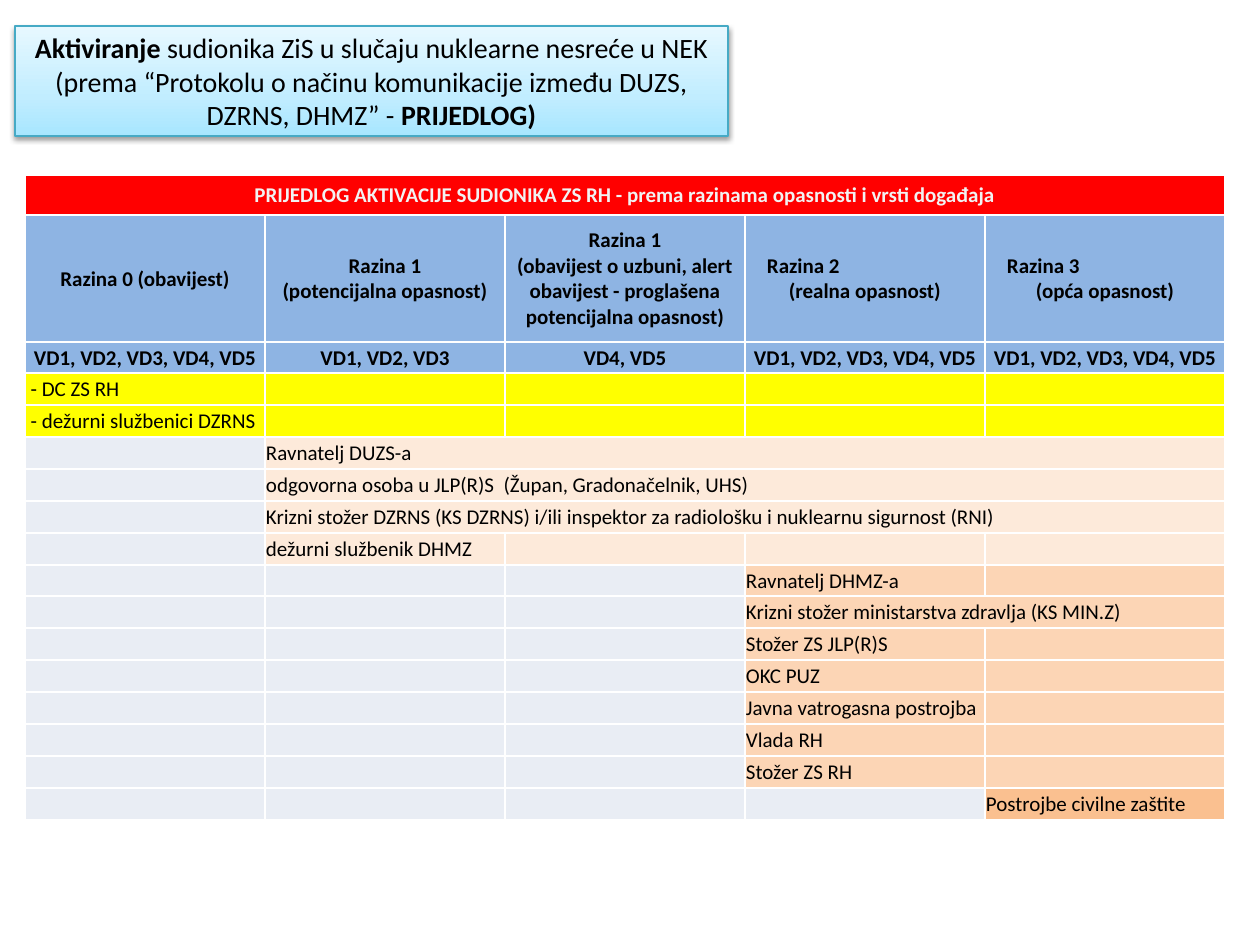
import dataclasses
import itertools

import lxml.etree
import pptx
import pptx.dml.color
import pptx.enum.text
import pptx.oxml
import pptx.oxml.ns
import pptx.slide
import pptx.table
import pptx.util

EMU_PER_PX = 914400 / 126
FONT = "Calibri"
COLUMNS = 5
COLUMN_WIDTH = 240
BANNER_HEIGHT = 40
LEVEL_HEIGHT = 127
BODY_HEIGHT = 478
BLUE = "8EB4E3"
YELLOW = "FFFF00"
PALE = "E9EDF4"
CREAM = "FDEADA"
PEACH = "FCD5B5"
ORANGE = "FAC090"
CENTER = pptx.enum.text.PP_ALIGN.CENTER
LEFT = pptx.enum.text.PP_ALIGN.LEFT


@dataclasses.dataclass(frozen=True)
class Level:
    text: str
    events: str
    first_line_indent: int = 0


@dataclasses.dataclass(frozen=True)
class Participant:
    text: str
    start: int
    fill: str
    span: int = 1


ALL_EVENTS = "VD1, VD2, VD3, VD4, VD5"
BANNER = "PRIJEDLOG AKTIVACIJE SUDIONIKA ZS RH - prema razinama opasnosti i vrsti događaja"
LEVELS = [
    Level("Razina 0 (obavijest)", ALL_EVENTS),
    Level("Razina 1\n(potencijalna opasnost)", "VD1, VD2, VD3"),
    Level(
        "Razina 1\n(obavijest o uzbuni, alert obavijest - proglašena potencijalna opasnost)",
        "VD4, VD5",
    ),
    Level("Razina 2\n(realna opasnost)", ALL_EVENTS, 21),
    Level("Razina 3\n(opća opasnost)", ALL_EVENTS, 21),
]
PARTICIPANTS = [
    Participant(" - DC ZS RH", 0, YELLOW),
    Participant(" - dežurni službenici DZRNS", 0, YELLOW),
    Participant("Ravnatelj DUZS-a", 1, CREAM, 4),
    Participant("odgovorna osoba u JLP(R)S  (Župan, Gradonačelnik, UHS)", 1, CREAM, 4),
    Participant(
        "Krizni stožer DZRNS (KS DZRNS) i/ili inspektor za radiološku i nuklearnu sigurnost (RNI)",
        1, CREAM, 4,
    ),
    Participant("dežurni službenik DHMZ", 1, CREAM),
    Participant("Ravnatelj DHMZ-a", 3, PEACH),
    Participant("Krizni stožer ministarstva zdravlja (KS MIN.Z)", 3, PEACH, 2),
    Participant("Stožer ZS JLP(R)S", 3, PEACH),
    Participant("OKC PUZ", 3, PEACH),
    Participant("Javna vatrogasna postrojba", 3, PEACH),
    Participant("Vlada RH", 3, PEACH),
    Participant("Stožer ZS RH", 3, PEACH),
    Participant("Postrojbe civilne zaštite", 4, ORANGE),
]
TITLE_RUNS = [
    ("Aktiviranje", True),
    (
        " sudionika ZiS u slučaju nuklearne nesreće u NEK (prema “Protokolu o načinu "
        "komunikacije između DUZS, DZRNS, DHMZ” - ",
        False,
    ),
    ("PRIJEDLOG)", True),
]


def px(length: int) -> pptx.util.Emu:
    return pptx.util.Emu(round(length * EMU_PER_PX))


def color(value: str) -> pptx.dml.color.RGBColor:
    return pptx.dml.color.RGBColor.from_string(value)


def drawing(tag: str, content: str, attributes: str = "") -> lxml.etree.ElementBase:
    namespace = pptx.oxml.ns.nsdecls("a")
    return pptx.oxml.parse_xml(f"<a:{tag} {namespace} {attributes}>{content}</a:{tag}>")


def format_font(font, size: int, bold: bool, value: str) -> None:
    font.name = FONT
    font.size = pptx.util.Pt(size)
    font.bold = bold
    font.color.rgb = color(value)


def add_title(slide: pptx.slide.Slide) -> None:
    title = slide.shapes.title
    title.left, title.top, title.width, title.height = px(15), px(26), px(713), px(110)
    stops = "".join(
        f'<a:gs pos="{position * 1000}"><a:srgbClr val="{value}"/></a:gs>'
        for position, value in [(0, "A7E6FF"), (35, "C1EDFF"), (100, "E7F8FF")]
    )
    properties = title._element.spPr
    properties.append(
        drawing("gradFill", f'<a:gsLst>{stops}</a:gsLst><a:lin ang="16200000" scaled="0"/>')
    )
    title.line.color.rgb = color("46AAC5")
    title.line.width = pptx.util.Pt(0.75)
    properties.append(
        drawing(
            "effectLst",
            '<a:outerShdw blurRad="40000" dist="20000" dir="5400000" rotWithShape="0">'
            '<a:srgbClr val="000000"><a:alpha val="38000"/></a:srgbClr></a:outerShdw>',
        )
    )
    frame = title.text_frame
    frame.word_wrap = True
    frame.auto_size = pptx.enum.text.MSO_AUTO_SIZE.NONE
    frame.vertical_anchor = pptx.enum.text.MSO_ANCHOR.MIDDLE
    paragraph = frame.paragraphs[0]
    paragraph.alignment = CENTER
    for text, bold in TITLE_RUNS:
        run = paragraph.add_run()
        run.text = text
        format_font(run.font, 16, bold, "000000")


def style_cell(cell: pptx.table._Cell, fill: str) -> None:
    cell.margin_left = cell.margin_right = cell.margin_top = px(1)
    cell.margin_bottom = 0
    cell.vertical_anchor = pptx.enum.text.MSO_ANCHOR.MIDDLE
    properties = cell._tc.get_or_add_tcPr()
    for side in ("lnL", "lnR", "lnT", "lnB"):
        properties.append(
            drawing(side, '<a:solidFill><a:srgbClr val="FFFFFF"/></a:solidFill>', 'w="12700"')
        )
    cell.fill.solid()
    cell.fill.fore_color.rgb = color(fill)
    cell.text_frame.paragraphs[0]._p.append(drawing("endParaRPr", "", 'sz="1200"'))


def write_cell(
    cell: pptx.table._Cell,
    text: str,
    bold: bool = False,
    alignment: pptx.enum.text.PP_ALIGN = LEFT,
    value: str = "000000",
) -> None:
    cell.text_frame.text = text
    for paragraph in cell.text_frame.paragraphs:
        paragraph.alignment = alignment
        for run in paragraph.runs:
            format_font(run.font, 12, bold, value)


def add_activation_table(slide: pptx.slide.Slide) -> None:
    body_count = len(PARTICIPANTS) + 1
    edges = [BODY_HEIGHT * index // body_count for index in range(body_count + 1)]
    heights = [BANNER_HEIGHT, LEVEL_HEIGHT]
    heights += [bottom - top for top, bottom in itertools.pairwise(edges)]
    table = slide.shapes.add_table(
        len(heights), COLUMNS, px(25), px(175), px(COLUMNS * COLUMN_WIDTH), px(sum(heights))
    ).table
    for column in table.columns:
        column.width = px(COLUMN_WIDTH)
    for row, height in zip(table.rows, heights):
        row.height = px(height)

    for column, level in enumerate(LEVELS):
        style_cell(table.cell(0, column), "FF0000")
        for row, text in ((1, level.text), (2, level.events)):
            style_cell(table.cell(row, column), BLUE)
            write_cell(table.cell(row, column), text, True, CENTER)
        if level.first_line_indent:
            paragraph = table.cell(1, column).text_frame.paragraphs[0]
            paragraph.alignment = LEFT
            paragraph._p.get_or_add_pPr().set("marL", str(px(level.first_line_indent)))
    table.cell(0, 0).merge(table.cell(0, COLUMNS - 1))
    write_cell(table.cell(0, 0), BANNER, True, CENTER, "F2F2F2")

    for row, participant in enumerate(PARTICIPANTS, start=3):
        for column in range(COLUMNS):
            fill = PALE if column < participant.start else participant.fill
            style_cell(table.cell(row, column), fill)
        cell = table.cell(row, participant.start)
        if participant.span > 1:
            cell.merge(table.cell(row, participant.start + participant.span - 1))
        write_cell(cell, participant.text)


def main() -> None:
    presentation = pptx.Presentation()
    presentation.slide_width, presentation.slide_height = px(1260), px(945)
    slide = presentation.slides.add_slide(presentation.slide_layouts[5])
    add_title(slide)
    add_activation_table(slide)
    presentation.save("out.pptx")


if __name__ == "__main__":
    main()
